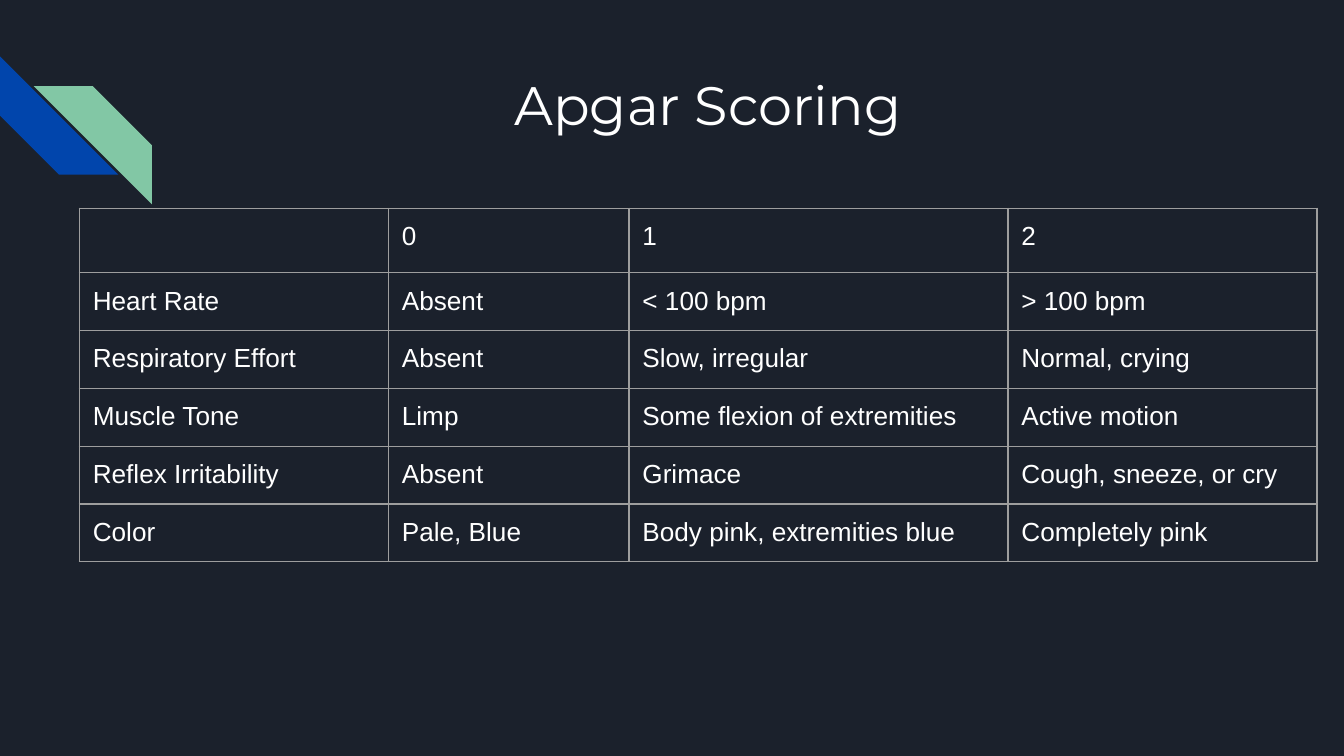
from dataclasses import dataclass

from lxml import etree
from pptx import Presentation
from pptx import util as u
from pptx.dml.color import RGBColor
from pptx.enum import shapes, text
from pptx.oxml.ns import qn


@dataclass(frozen=True)
class Theme:
    background: str = "1B212C"
    blue: str = "0145AC"
    green: str = "82C7A5"
    ink: str = "FFFFFF"
    border: str = "9E9E9E"
    title_font: str = "Montserrat"
    body_font: str = "Arial"
    title_size: int = 29
    body_size: int = 14
    border_width: float = 0.75


THEME = Theme()
STRIPE_SIZE = 0.88
COLUMN_WIDTHS = [2.3, 1.79, 2.82, 2.3]
HEADER_HEIGHT, ROW_HEIGHT = 0.48, 0.43
SCORES = [
    ["", "0", "1", "2"],
    ["Heart Rate", "Absent", "< 100 bpm", "> 100 bpm"],
    ["Respiratory Effort", "Absent", "Slow, irregular", "Normal, crying"],
    ["Muscle Tone", "Limp", "Some flexion of extremities", "Active motion"],
    ["Reflex Irritability", "Absent", "Grimace", "Cough, sneeze, or cry"],
    ["Color", "Pale, Blue", "Body pink, extremities blue", "Completely pink"],
]


def rgb(color):
    return RGBColor.from_string(color)


def add_run(p, content, font, size):
    r = p.add_run()
    r.text = content
    r.font.name = font
    r.font.size = u.Pt(size)
    r.font.color.rgb = rgb(THEME.ink)


def set_margins(target):
    for side in ("left", "top", "right", "bottom"):
        setattr(target, f"margin_{side}", u.Inches(0.1))


def add_stripe(s, left, top, color, rotation=0, mirrored=False):
    sp = s.shapes.add_shape(
        shapes.MSO_SHAPE.DIAGONAL_STRIPE, u.Inches(left), u.Inches(top),
        u.Inches(STRIPE_SIZE), u.Inches(STRIPE_SIZE))
    sp.adjustments[0] = 0.5
    sp.rotation = rotation
    if mirrored:
        sp._element.spPr.find(qn("a:xfrm")).set("flipH", "1")
    sp.shadow.inherit = False
    sp.fill.solid()
    sp.fill.fore_color.rgb = rgb(color)
    sp.line.fill.background()


def set_title(s, content):
    sp = s.shapes.title
    sp.left, sp.top = u.Inches(1.42), u.Inches(0.43)
    sp.width, sp.height = u.Inches(7.7), u.Inches(1)
    tf = sp.text_frame
    tf.word_wrap = True
    tf.auto_size = text.MSO_AUTO_SIZE.NONE
    tf.vertical_anchor = text.MSO_ANCHOR.TOP
    set_margins(tf)
    p = tf.paragraphs[0]
    p.alignment = text.PP_ALIGN.CENTER
    add_run(p, content, THEME.title_font, THEME.title_size)


def add_borders(cell):
    tc_pr = cell._tc.get_or_add_tcPr()
    for side in ("a:lnL", "a:lnR", "a:lnT", "a:lnB"):
        line = etree.SubElement(tc_pr, qn(side), w=str(u.Pt(THEME.border_width)))
        fill = etree.SubElement(line, qn("a:solidFill"))
        etree.SubElement(fill, qn("a:srgbClr"), val=THEME.border)


def format_cell(cell, content):
    set_margins(cell)
    add_borders(cell)
    cell.fill.background()
    p = cell.text_frame.paragraphs[0]
    if content:
        add_run(p, content, THEME.body_font, THEME.body_size)
    else:
        # Keep the blank cell from stretching its row
        p._p.get_or_add_endParaRPr().set("sz", str(THEME.body_size * 100))


def add_score_table(s, rows, left, top):
    heights = [HEADER_HEIGHT] + [ROW_HEIGHT] * (len(rows) - 1)
    table = s.shapes.add_table(
        len(rows), len(COLUMN_WIDTHS), u.Inches(left), u.Inches(top),
        u.Inches(sum(COLUMN_WIDTHS)), u.Inches(sum(heights))).table
    table.first_row = table.horz_banding = False
    for column, width in zip(table.columns, COLUMN_WIDTHS):
        column.width = u.Inches(width)
    for row, height, values in zip(table.rows, heights, rows):
        row.height = u.Inches(height)
        for cell, value in zip(row.cells, values):
            format_cell(cell, value)


def main():
    prs = Presentation()
    # Widescreen, 16:9
    prs.slide_width = u.Inches(10)
    prs.slide_height = u.Inches(10 * 9 / 16)
    s = prs.slides.add_slide(prs.slide_layouts[5])
    s.background.fill.solid()
    s.background.fill.fore_color.rgb = rgb(THEME.background)

    # Corner decoration
    add_stripe(s, 0, 0.42, THEME.blue, rotation=270)
    add_stripe(s, 0.25, 0.64, THEME.green, mirrored=True)

    # Title and scoring table
    set_title(s, "Apgar Scoring")
    add_score_table(s, SCORES, 0.59, 1.55)

    prs.save("out.pptx")


if __name__ == "__main__":
    main()
